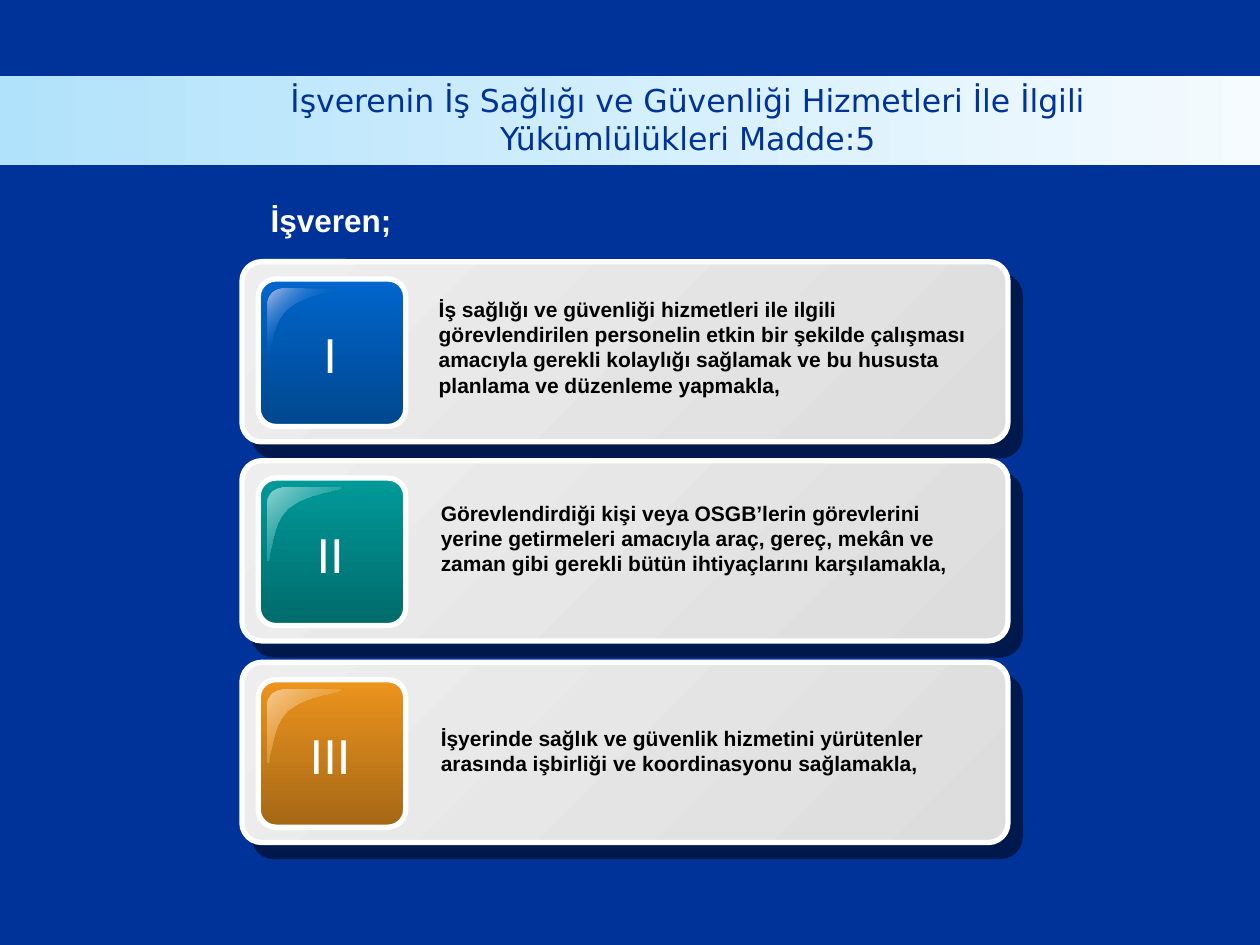
"""Build a slide listing the employer's three duties as numbered cards."""
import copy
import dataclasses
import typing

import lxml.etree
import pptx
import pptx.dml.color
import pptx.enum.shapes
import pptx.enum.text
import pptx.oxml.ns
import pptx.util

Shapes = pptx.enum.shapes.MSO_SHAPE
Anchor = pptx.enum.text.MSO_ANCHOR
Align = pptx.enum.text.PP_ALIGN
AutoSize = pptx.enum.text.MSO_AUTO_SIZE
Colour = pptx.dml.color.RGBColor.from_string
qualified = pptx.oxml.ns.qn

SLIDE_WIDTH, SLIDE_HEIGHT = pptx.util.Inches(10), pptx.util.Inches(7.5)
GRID_COLUMNS = 1000
CELL = SLIDE_WIDTH / GRID_COLUMNS
CARD_COLUMN = 192


@dataclasses.dataclass(frozen=True)
class Theme:
    navy: str = "003399"
    white: str = "FFFFFF"
    black: str = "000000"
    band: tuple[str, str] = ("B1E2FB", "F5FBFE")
    panel: tuple[str, str] = ("EEEEEE", "DDDDDD")
    title_font: str = "DejaVu Sans"
    body_font: str = "Arial"
    heading_size: int = 18
    numeral_size: int = 28
    body_size: int = 12
    outline: int = 3


class Box(typing.NamedTuple):
    column: float
    row: float
    columns: float
    rows: float

    def lengths(self) -> list[int]:
        return [round(value * CELL) for value in self]


class Card(typing.NamedTuple):
    row: float
    numeral: str
    text: str
    tile: tuple[str, str]
    glare: str
    text_box: Box
    mirrored_glare: bool = False


class Style(typing.NamedTuple):
    size: int
    colour: str
    bold: bool
    font: str


THEME = Theme()
BODY = Style(THEME.body_size, THEME.black, True, THEME.body_font)
NUMERAL = Style(THEME.numeral_size, THEME.white, False, THEME.body_font)
HEADING = Style(THEME.heading_size, THEME.white, True, THEME.body_font)
TITLE = Style(THEME.heading_size, THEME.navy, False, THEME.title_font)

CARDS = [
    Card(208, "I", "İş sağlığı ve güvenliği hizmetleri ile ilgili görevlendirilen personelin "
         "etkin bir şekilde çalışması amacıyla gerekli kolaylığı sağlamak ve bu hususta "
         "planlama ve düzenleme yapmakla,", ("0066CC", "00478E"), "B5C0E5",
         Box(338.4, 230.4, 447, 91), True),
    Card(366, "II", "Görevlendirdiği kişi veya OSGB’lerin görevlerini yerine getirmeleri "
         "amacıyla araç, gereç, mekân ve zaman gibi gerekli bütün ihtiyaçlarını karşılamakla,",
         ("009999", "006B6B"), "93D4D4", Box(340, 392, 447, 71)),
    Card(526, "III", "İşyerinde sağlık ve güvenlik hizmetini yürütenler arasında işbirliği ve "
         "koordinasyonu sağlamakla,", ("EC941E", "A56715"), "F6CB92",
         Box(340, 571, 447, 51)),
]

GLARE_POINTS = [(12, 0), (6, 0), (0, 5), (0, 12), (0, 58), (3, 59), (2, 30), (16, 17),
                (31, 4), (59, 3), (58, 0)]
GLARE_CURVE_STARTS = (0, 4, 7)


def set_gradient(shape, colours: tuple[str, str], angle: int) -> None:
    """Fill a shape with two colours along a clockwise angle."""
    shape.fill.gradient()
    shape.fill.gradient_angle = -angle % 360
    for stop, colour in zip(shape.fill.gradient_stops, colours):
        stop.color.rgb = Colour(colour)


def add_panel(shapes, box: Box, colours: tuple[str, str], angle: int,
              corner: float | None = None):
    """Add a gradient rectangle, rounded and outlined when a corner is given."""
    kind = Shapes.RECTANGLE if corner is None else Shapes.ROUNDED_RECTANGLE
    shape = shapes.add_shape(kind, *box.lengths())
    shape.shadow.inherit = False
    set_gradient(shape, colours, angle)
    if corner is None:
        shape.line.fill.background()
    else:
        shape.adjustments[0] = corner
        shape.line.color.rgb = Colour(THEME.white)
        shape.line.width = pptx.util.Pt(THEME.outline)
    return shape


def add_hard_shadow(shape) -> None:
    """Give a shape a half transparent shadow without blur."""
    effects = shape.element.spPr.find(qualified("a:effectLst"))
    shadow = lxml.etree.SubElement(
        effects, qualified("a:outerShdw"), blurRad="0",
        dist=str(pptx.util.Pt(10.6)), dir=str(49 * 60000), algn="ctr", rotWithShape="0")
    colour = lxml.etree.SubElement(shadow, qualified("a:srgbClr"), val=THEME.black)
    lxml.etree.SubElement(colour, qualified("a:alpha"), val="50000")


def add_text(shapes, box: Box, text: str, style: Style, align=Align.LEFT,
             **frame_format) -> None:
    """Add a one-paragraph text box."""
    frame = shapes.add_textbox(*box.lengths()).text_frame
    settings = {"word_wrap": True, "auto_size": AutoSize.SHAPE_TO_FIT_TEXT} | frame_format
    for name, value in settings.items():
        setattr(frame, name, value)
    paragraph = frame.paragraphs[0]
    paragraph.alignment = align
    run = paragraph.add_run()
    run.text = text
    font_format = {"name": style.font, "size": pptx.util.Pt(style.size), "bold": style.bold}
    for name, value in font_format.items():
        setattr(run.font, name, value)
    run.font.color.rgb = Colour(style.colour)


def bend_segments(shape, starts: tuple[int, ...]) -> None:
    """Join each three segments from the given starts into one cubic curve."""
    segments = list(shape.element.iter(qualified("a:lnTo")))
    for start in starts:
        curve = lxml.etree.Element(qualified("a:cubicBezTo"))
        segments[start].addprevious(curve)
        for segment in segments[start:start + 3]:
            curve.append(segment[0])
            segment.getparent().remove(segment)


def add_glare(shapes, column: float, row: float, card: Card) -> None:
    """Add the corner highlight that fades into the tile."""
    points = [((column + x) * CELL, (row + y) * CELL) for x, y in GLARE_POINTS]
    builder = shapes.build_freeform(*points[0])
    builder.add_line_segments(points[1:], close=True)
    shape = builder.convert_to_shape()
    bend_segments(shape, GLARE_CURVE_STARTS)
    shape.shadow.inherit = False
    shape.line.fill.background()
    set_gradient(shape, (card.glare, card.tile[0]), 45)
    first, last = shape.element.iter(qualified("a:gs"))
    lxml.etree.SubElement(last[0], qualified("a:alpha"), val="0")
    if card.mirrored_glare:
        shape.fill.gradient_stops[1].position = 0.5
        end = copy.deepcopy(first)
        end.set("pos", "100000")
        last.addnext(end)


def add_card(slide, card: Card) -> None:
    """Add a grouped panel with its numbered tile and highlight."""
    shapes = slide.shapes.add_group_shape().shapes
    panel = add_panel(shapes, Box(CARD_COLUMN, card.row - 0.3, 608, 143), THEME.panel, 45, 0.109)
    add_hard_shadow(panel)
    add_panel(shapes, Box(CARD_COLUMN + 13, card.row + 13.5, 117, 117), card.tile, 90, 0.119)
    add_glare(shapes, CARD_COLUMN + 20, card.row + 21, card)
    columns = 20 + 11 * len(card.numeral)
    add_text(shapes, Box(CARD_COLUMN + 70 - columns / 2, card.row + 45, columns, 57),
             card.numeral, NUMERAL, Align.CENTER, word_wrap=False)
    if card is CARDS[0]:
        add_text(shapes, card.text_box, card.text, BODY)


def main() -> None:
    """Build and save the slide."""
    presentation = pptx.Presentation()
    presentation.slide_width, presentation.slide_height = SLIDE_WIDTH, SLIDE_HEIGHT
    slide = presentation.slides.add_slide(presentation.slide_layouts[6])
    slide.background.fill.solid()
    slide.background.fill.fore_color.rgb = Colour(THEME.navy)
    add_panel(slide.shapes, Box(0, 60, GRID_COLUMNS, 71), THEME.band, 0)
    for card in CARDS:
        add_card(slide, card)
    add_text(slide.shapes, Box(205, 155, 177, 40), "İşveren;", HEADING)
    for card in CARDS[1:]:
        add_text(slide.shapes, card.text_box, card.text, BODY)
    add_text(slide.shapes, Box(217, 63.4, 658, 62),
             "İşverenin İş Sağlığı ve Güvenliği Hizmetleri İle İlgili Yükümlülükleri Madde:5",
             TITLE, Align.CENTER, vertical_anchor=Anchor.MIDDLE, auto_size=AutoSize.NONE)
    presentation.save("out.pptx")


if __name__ == "__main__":
    main()
